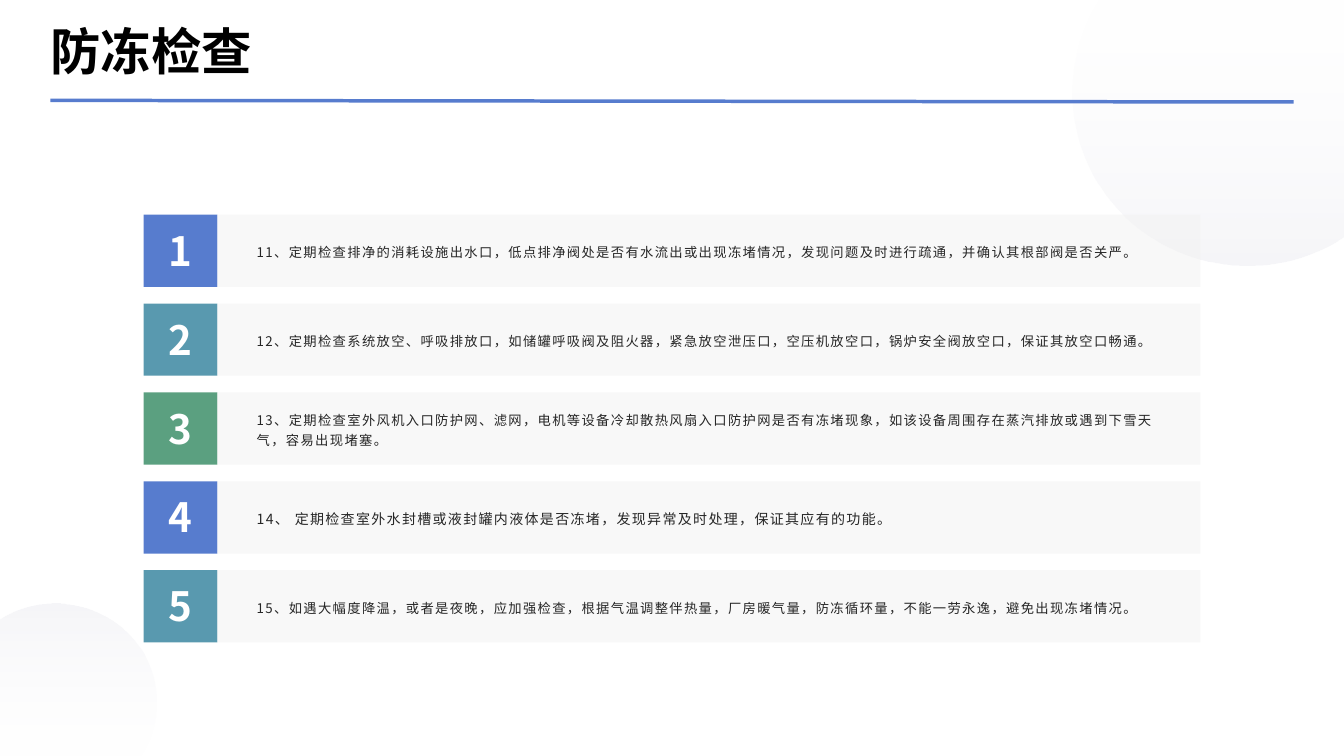
from itertools import cycle
from math import asin, acos, cos, sin, pi

from lxml.etree import SubElement
from pptx import Presentation
from pptx.dml.color import RGBColor
from pptx.enum.shapes import MSO_CONNECTOR as Connector, MSO_SHAPE as Preset
from pptx.enum.text import MSO_ANCHOR as Anchor, MSO_AUTO_SIZE as AutoSize, PP_ALIGN as Align
from pptx.oxml.ns import qn
from pptx.util import Cm, Pt

WIDTH, HEIGHT = 33.87, 19.05
BLUE, TEAL, GREEN = "577CCE", "5999AF", "5BA080"
ROW_TOP, ROW_PITCH, ROW_HEIGHT = 5.41, 2.24, 1.82

# Inspection items with their text sizes
CHECKS = [
    ("11、定期检查排净的消耗设施出水口，低点排净阀处是否有水流出或出现冻堵情况，发现问题及时进行疏通，并确认其根部阀是否关严。", 9.5),
    ("12、定期检查系统放空、呼吸排放口，如储罐呼吸阀及阻火器，紧急放空泄压口，空压机放空口，锅炉安全阀放空口，保证其放空口畅通。", 9.5),
    ("13、定期检查室外风机入口防护网、滤网，电机等设备冷却散热风扇入口防护网是否有冻堵现象，如该设备周围存在蒸汽排放或遇到下雪天气，容易出现堵塞。", 9.5),
    ("14、 定期检查室外水封槽或液封罐内液体是否冻堵，发现异常及时处理，保证其应有的功能。", 10),
    ("15、如遇大幅度降温，或者是夜晚，应加强检查，根据气温调整伴热量，厂房暖气量，防冻循环量，不能一劳永逸，避免出现冻堵情况。", 9.5),
]


def colour(hex_string):
    return RGBColor.from_string(hex_string)


def set_alpha(colour_element, percent):
    SubElement(colour_element, qn("a:alpha")).set("val", str(percent * 1000))


def arc(centre, radii, start, end, steps=60):
    angles = [start + (end - start) * step / steps for step in range(steps + 1)]
    return [(centre[0] + radii[0] * cos(a), centre[1] + radii[1] * sin(a)) for a in angles]


class SlideBuilder:
    font = "Noto Sans CJK SC"

    def __init__(self, slide):
        self.slide = slide
        self.shapes = slide.shapes

    def add_run(self, paragraph, text, size, hex_string, bold=False, spacing=0):
        run = paragraph.add_run()
        run.text = text
        run.font.size = Pt(size)
        run.font.bold = bold
        run.font.name = self.font
        run.font.color.rgb = colour(hex_string)
        properties = run._r.get_or_add_rPr()
        properties.set("spc", str(spacing * 100))
        SubElement(properties, qn("a:ea")).set("typeface", self.font)

    def title(self, text, left, top, width, height):
        heading = self.shapes.title
        heading.left, heading.top, heading.width, heading.height = map(Cm, (left, top, width, height))
        frame = heading.text_frame
        frame.margin_left = frame.margin_right = frame.margin_top = frame.margin_bottom = 0
        frame.vertical_anchor = Anchor.MIDDLE
        frame.auto_size = AutoSize.NONE
        frame.paragraphs[0].alignment = Align.LEFT
        self.add_run(frame.paragraphs[0], text, 36, "000000", bold=True)

    def rule(self, start, end, hex_string, weight):
        line = self.shapes.add_connector(Connector.STRAIGHT, *map(Cm, start + end))
        line.line.color.rgb = colour(hex_string)
        line.line.width = Pt(weight)
        SubElement(line._element.spPr, qn("a:effectLst"))

    def rectangle(self, left, top, width, height, hex_string, alpha=None):
        block = self.shapes.add_shape(Preset.RECTANGLE, *map(Cm, (left, top, width, height)))
        block.shadow.inherit = False
        block.fill.solid()
        block.fill.fore_color.rgb = colour(hex_string)
        block.line.fill.background()
        if alpha is not None:
            set_alpha(block._element.spPr.find(".//" + qn("a:srgbClr")), alpha)

    def text(self, text, left, top, width, height, size, hex_string, wrap=True,
             anchor=Anchor.TOP, line_spacing=None, **run_style):
        frame = self.shapes.add_textbox(*map(Cm, (left, top, width, height))).text_frame
        frame.word_wrap = wrap
        frame.vertical_anchor = anchor
        frame.paragraphs[0].line_spacing = line_spacing
        self.add_run(frame.paragraphs[0], text, size, hex_string, **run_style)

    def bubble(self, points, gradient_angle):
        outline = [(Cm(x), Cm(y)) for x, y in points]
        builder = self.shapes.build_freeform(*outline[0])
        builder.add_line_segments(outline[1:], close=True)
        bubble = builder.convert_to_shape()
        bubble.shadow.inherit = False
        bubble.line.fill.background()
        bubble.fill.gradient()
        bubble.fill.gradient_angle = gradient_angle
        for stop, hex_string in zip(bubble.fill.gradient_stops, ("FFFFFF", "D8D8E4")):
            stop.color.rgb = colour(hex_string)
        stop_colours = bubble._element.spPr.findall(".//" + qn("a:srgbClr"))
        for stop_colour, alpha, position in zip(stop_colours, (10, 24), (0, 1)):
            set_alpha(stop_colour, alpha)
            stop_colour.getparent().set("pos", str(position * 100000))


def main():
    prs = Presentation()
    prs.slide_width, prs.slide_height = Cm(WIDTH), Cm(HEIGHT)
    page = SlideBuilder(prs.slides.add_slide(prs.slide_layouts[5]))

    # Background circles, cut off by the slide edges
    (x, y), (rx, ry) = centre, radii = (31.42, 2.34), (4.39, 4.34)
    top_right = arc(centre, radii, acos((WIDTH - x) / rx), pi + asin(y / ry))
    page.bubble(top_right + [(WIDTH, 0)], 270)
    (x, y), (rx, ry) = centre, radii = (1.4, 17.7), (2.54, 2.49)
    bottom_left = arc(centre, radii, -acos(-x / rx), asin((HEIGHT - y) / ry))
    page.bubble(bottom_left + [(0, HEIGHT)], 90)

    # Heading
    page.rule((1.27, 2.53), (32.6, 2.57), BLUE, 2.5)
    page.title("防冻检查", 1.27, 0.43, 31.32, 1.7)

    # Numbered rows
    tile_colours = cycle((BLUE, TEAL, GREEN))
    for index, ((check, size), tile_colour) in enumerate(zip(CHECKS, tile_colours)):
        top = ROW_TOP + index * ROW_PITCH
        page.rectangle(3.62, top, 1.86, ROW_HEIGHT, tile_colour)
        page.rectangle(5.48, top, 24.77, ROW_HEIGHT, "F2F2F2", alpha=50)
        page.text(check, 6.22, top + 0.26, 23.27, 1.3, size, "262626",
                  anchor=Anchor.MIDDLE, line_spacing=1.2, spacing=1)
        page.text(str(index + 1), 3.99, top + 0.16, 1.12, 1.5, 28.8, "FFFFFF",
                  wrap=False, bold=True)

    prs.save("out.pptx")


if __name__ == "__main__":
    main()
